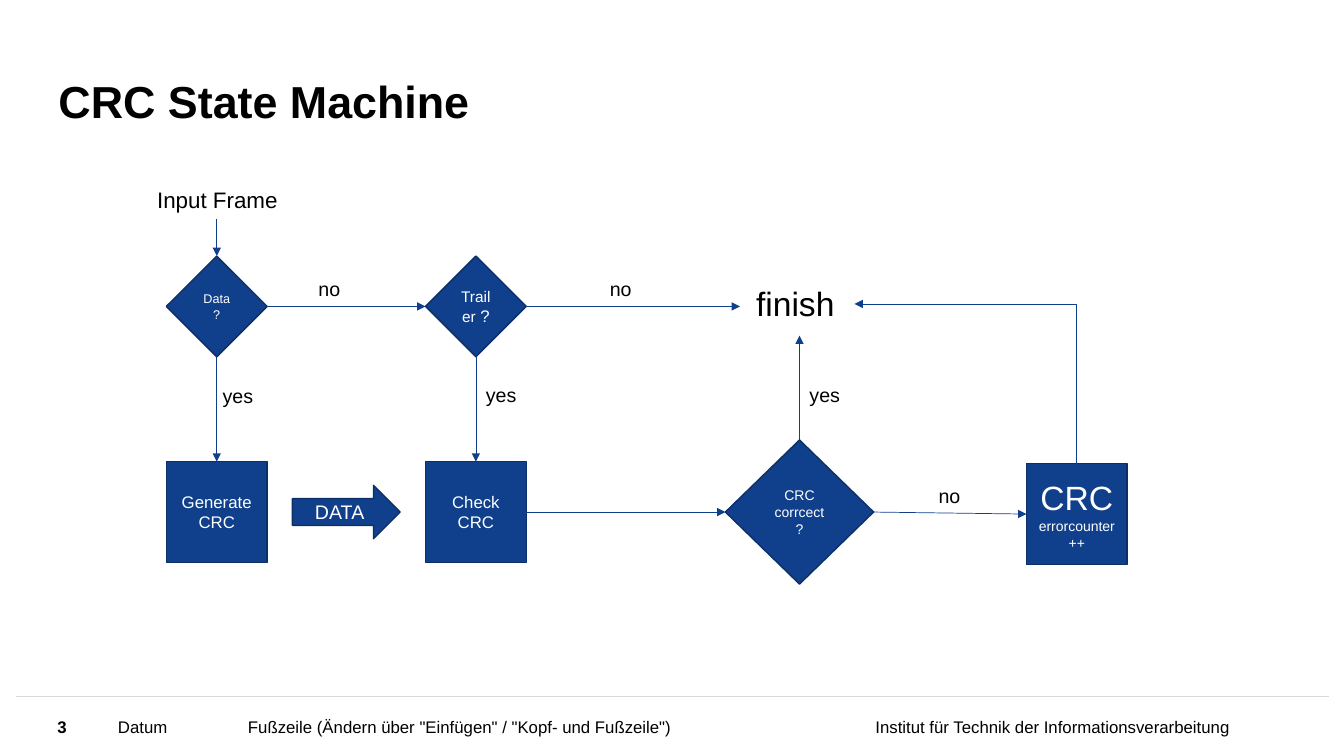
"""Builds the CRC state machine flow chart slide."""
from dataclasses import dataclass
from typing import NamedTuple, Optional, Union

from lxml.etree import SubElement
from pptx import Presentation
from pptx.dml.color import RGBColor
from pptx.enum.shapes import MSO_CONNECTOR as Link, MSO_SHAPE as Form
from pptx.enum.text import MSO_ANCHOR as Anchor, PP_ALIGN as Align
from pptx.oxml.ns import qn
from pptx.util import Inches, Pt

BLUE = RGBColor(0x10, 0x40, 0x8B)
NAVY = RGBColor(0x0C, 0x2F, 0x67)
GRAY = RGBColor(0xD9, 0xD9, 0xD9)
BLACK = RGBColor(0, 0, 0)
WHITE = RGBColor(255, 255, 255)
FONT = "Arial"

TOP, LEFT, BOTTOM, RIGHT = range(4)
OFFSETS = {TOP: (0, -0.5), LEFT: (-0.5, 0), BOTTOM: (0, 0.5), RIGHT: (0.5, 0)}
DATA_X, TRAILER_X, RESULT_X, ERROR_X = 2.15, 4.72, 7.93, 10.68
UPPER_Y, LOWER_Y = 3.04, 5.08


class Span(NamedTuple):
    text: str
    size: float


class Point(NamedTuple):
    x: float
    y: float


class Site(NamedTuple):
    node: str
    side: int


End = Union[Point, Site]


@dataclass
class Node:
    form: Form
    x: float
    y: float
    spans: list[Span]
    width: float = 1
    height: float = 1


@dataclass
class Label:
    text: str
    x: float
    y: float
    width: float
    height: float
    size: float = 14


@dataclass
class Caption:
    text: str
    x: float
    y: float
    width: float
    height: float = 0.58
    size: float = 12
    bold: bool = False
    align: Align = Align.LEFT
    anchor: Anchor = Anchor.MIDDLE
    spacing: Optional[float] = None


NODES = {
    "data": Node(Form.DIAMOND, DATA_X, UPPER_Y, [Span("Data ?", 9)]),
    "trailer": Node(Form.DIAMOND, TRAILER_X, UPPER_Y, [Span("Trailer", 11), Span(" ?", 12)]),
    "generate": Node(Form.RECTANGLE, DATA_X, LOWER_Y, [Span("Generate CRC", 12)]),
    "check": Node(Form.RECTANGLE, TRAILER_X, LOWER_Y, [Span("Check CRC", 12)]),
    "payload": Node(Form.RIGHT_ARROW, 3.435, LOWER_Y, [Span("DATA", 14)], 1.07, 0.53),
    "correct": Node(Form.DIAMOND, RESULT_X, LOWER_Y, [Span("CRC corrcect?", 10)], 1.47, 1.43),
    "error": Node(Form.RECTANGLE, ERROR_X, 5.1, [Span("CRC ", 24), Span("errorcounter ++", 10)]),
}

ARROWS: list[tuple[End, End]] = [
    (Point(DATA_X, 2.17), Site("data", TOP)),
    (Site("data", BOTTOM), Site("generate", TOP)),
    (Site("data", RIGHT), Site("trailer", LEFT)),
    (Site("trailer", BOTTOM), Site("check", TOP)),
    (Site("trailer", RIGHT), Point(7.34, UPPER_Y)),
    (Site("check", RIGHT), Site("correct", LEFT)),
    (Site("correct", TOP), Point(RESULT_X, 3.33)),
    (Site("correct", RIGHT), Site("error", LEFT)),
]

LABELS = [
    Label("Input Frame", 1.46, 1.8, 1.41, 0.37, 16),
    Label("finish", 7.4, 2.76, 0.99, 0.5, 24),
    *(Label("yes", x, y, 0.51, 0.34) for x, y in ((2.11, 3.76), (TRAILER_X, 3.75), (RESULT_X, 3.75))),
    *(Label("no", x, y, 0.42, 0.34) for x, y in ((3.06, 2.7), (5.95, 2.7), (9.21, 4.75))),
]

CAPTIONS = [
    Caption("CRC State Machine", 0.58, 0.43, 10.02, 0.84, 32, True, anchor=Anchor.BOTTOM, spacing=0.9),
    Caption("3", 0.57, 6.92, 0.48, bold=True),
    Caption("Datum", 1.17, 6.92, 1.19),
    Caption('Fußzeile (Ändern über "Einfügen" / "Kopf- und Fußzeile")', 2.46, 6.92, 6.06),
    Caption("Institut für Technik der Informationsverarbeitung", 7.47, 6.92, 4.73, align=Align.RIGHT),
]


def write(para, spans: list[Span], color: RGBColor, bold: bool = False) -> None:
    for span in spans:
        run = para.add_run()
        run.text = span.text
        run.font.name = FONT
        run.font.size = Pt(span.size)
        run.font.bold = bold
        run.font.color.rgb = color


def draw_node(page, node: Node):
    shape = page.shapes.add_shape(
        node.form, Inches(node.x - node.width / 2), Inches(node.y - node.height / 2),
        Inches(node.width), Inches(node.height))
    shape.shadow.inherit = False
    shape.fill.solid()
    shape.fill.fore_color.rgb = BLUE
    shape.line.color.rgb = NAVY
    shape.line.width = Pt(1)
    shape.text_frame.vertical_anchor = Anchor.MIDDLE
    para = shape.text_frame.paragraphs[0]
    para.alignment = Align.CENTER
    write(para, node.spans, WHITE)
    return shape


def draw_line(page, start: Point, end: Point, color: RGBColor, width: float,
              link: Link = Link.STRAIGHT, arrow: bool = True):
    line = page.shapes.add_connector(link, *(Inches(value) for value in (*start, *end)))
    line.line.color.rgb = color
    line.line.width = Pt(width)
    if arrow:
        SubElement(line.line._get_or_add_ln(), qn("a:tailEnd"), type="triangle")
    SubElement(line.element.spPr, qn("a:effectLst"))
    return line


def locate(end: End) -> Point:
    if isinstance(end, Point):
        return end
    node = NODES[end.node]
    across, down = OFFSETS[end.side]
    return Point(node.x + across * node.width, node.y + down * node.height)


def draw_arrow(page, shapes: dict, start: End, end: End) -> None:
    arrow = draw_line(page, locate(start), locate(end), BLUE, 0.5)
    if isinstance(start, Site):
        arrow.begin_connect(shapes[start.node], start.side)
    if isinstance(end, Site):
        arrow.end_connect(shapes[end.node], end.side)


def draw_return_arrow(page) -> None:
    arrow = draw_line(page, Point(8.78, 4.91), Point(10.37, 2.71), BLUE, 0.5, Link.ELBOW)
    properties = arrow.element.spPr
    properties.find(qn("a:xfrm")).set("rot", str(270 * 60000))
    properties.find(qn("a:prstGeom")).set("prst", "bentConnector2")


def add_box(page, item: Union[Label, Caption]):
    return page.shapes.add_textbox(
        Inches(item.x), Inches(item.y), Inches(item.width), Inches(item.height)).text_frame


def draw_label(page, label: Label) -> None:
    frame = add_box(page, label)
    frame.word_wrap = False
    write(frame.paragraphs[0], [Span(label.text, label.size)], BLACK)


def draw_caption(page, caption: Caption) -> None:
    frame = add_box(page, caption)
    frame.word_wrap = True
    frame.vertical_anchor = caption.anchor
    frame.margin_left = frame.margin_right = frame.margin_top = frame.margin_bottom = 0
    para = frame.paragraphs[0]
    para.alignment = caption.align
    para.line_spacing = caption.spacing
    write(para, [Span(caption.text, caption.size)], BLACK, caption.bold)


def main() -> None:
    deck = Presentation()
    deck.slide_width, deck.slide_height = Inches(13.33), Inches(7.5)
    page = deck.slides.add_slide(deck.slide_layouts[6])
    draw_line(page, Point(0.16, 6.91), Point(13.18, 6.91), GRAY, 1, arrow=False)
    for caption in CAPTIONS:
        draw_caption(page, caption)
    shapes = {name: draw_node(page, node) for name, node in NODES.items()}
    for start, end in ARROWS:
        draw_arrow(page, shapes, start, end)
    draw_return_arrow(page)
    for label in LABELS:
        draw_label(page, label)
    deck.save("out.pptx")


if __name__ == "__main__":
    main()
